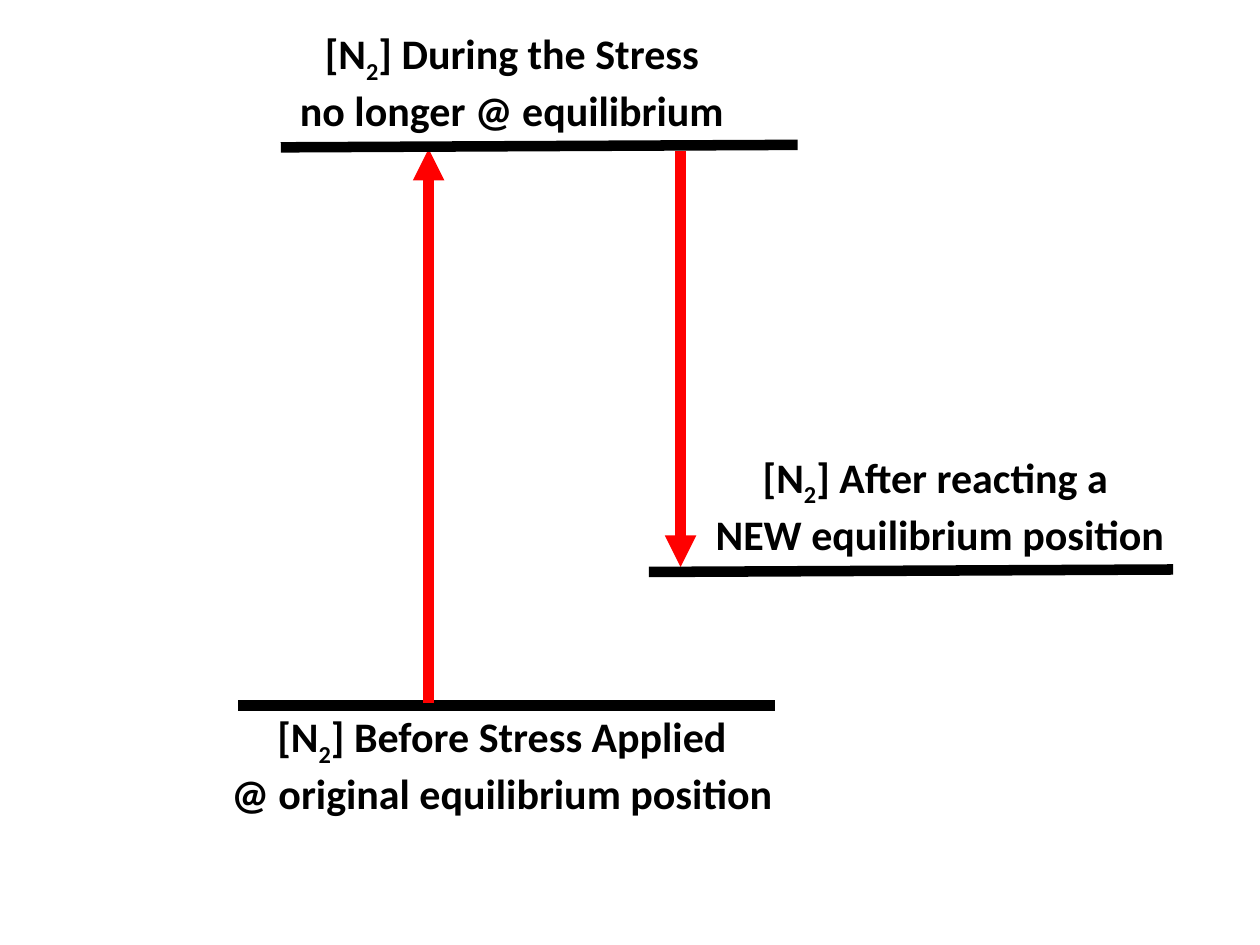
import pptx
import pptx.dml.color
import pptx.enum.shapes
import pptx.enum.text
import pptx.oxml.ns
import pptx.util
from lxml import etree
from pptx.util import Cm

COLORS = {"level": "000000", "change": "FF0000", "text": "000000"}
FONT = "Calibri"
LINE_WIDTH = 6
LABEL_HEIGHT = 2.31


def add_line(slide, start, end, color, arrow=False):
    """Draw a thick line, with an arrowhead at its end if wanted."""
    line = slide.shapes.add_connector(
        pptx.enum.shapes.MSO_CONNECTOR.STRAIGHT,
        Cm(start[0]), Cm(start[1]), Cm(end[0]), Cm(end[1]))
    line.line.width = pptx.util.Pt(LINE_WIDTH)
    line.line.color.rgb = pptx.dml.color.RGBColor.from_string(COLORS[color])
    properties = line._element.spPr
    if arrow:
        etree.SubElement(properties.find(pptx.oxml.ns.qn("a:ln")),
                         pptx.oxml.ns.qn("a:tailEnd"), type="triangle")
    etree.SubElement(properties, pptx.oxml.ns.qn("a:effectLst"))


def add_run(paragraph, text, subscript=False):
    run = paragraph.add_run()
    run.text = text
    run.font.name = FONT
    run.font.size = pptx.util.Pt(24)
    run.font.bold = True
    run.font.color.rgb = pptx.dml.color.RGBColor.from_string(COLORS["text"])
    if subscript:
        run.font._element.set("baseline", "-25000")


def add_label(slide, left, top, width, state, position):
    """Write the concentration of nitrogen and its state on two lines."""
    box = slide.shapes.add_textbox(Cm(left), Cm(top), Cm(width), Cm(LABEL_HEIGHT))
    frame = box.text_frame
    frame.word_wrap = True
    frame.auto_size = pptx.enum.text.MSO_AUTO_SIZE.SHAPE_TO_FIT_TEXT
    paragraph = frame.paragraphs[0]
    paragraph.alignment = pptx.enum.text.PP_ALIGN.CENTER
    add_run(paragraph, "[N")
    add_run(paragraph, "2", subscript=True)
    add_run(paragraph, "] " + state)
    paragraph.add_line_break()
    add_run(paragraph, position)


def main():
    presentation = pptx.Presentation()
    presentation.slide_width = Cm(25.4)
    presentation.slide_height = Cm(19.05)
    slide = presentation.slides.add_slide(presentation.slide_layouts[6])

    # Before the stress
    add_line(slide, (4.8, 14.22), (15.62, 14.22), "level")
    add_label(slide, 4.19, 14.2, 11.86,
              "Before Stress Applied", "@ original equilibrium position")

    # Rise to the stressed level
    add_line(slide, (8.64, 14.17), (8.64, 3), "change", arrow=True)
    add_line(slide, (5.66, 2.97), (16.08, 2.92), "level")
    add_label(slide, 4.39, 0.43, 11.86,
              "During the Stress", "no longer @ equilibrium")

    # Fall to the new equilibrium
    add_line(slide, (13.72, 3.05), (13.72, 11.43), "change", arrow=True)
    add_line(slide, (13.08, 11.53), (23.65, 11.48), "level")
    add_label(slide, 13.77, 8.97, 10.36,
              "After reacting a ", "NEW equilibrium position")

    presentation.save("out.pptx")


if __name__ == "__main__":
    main()
